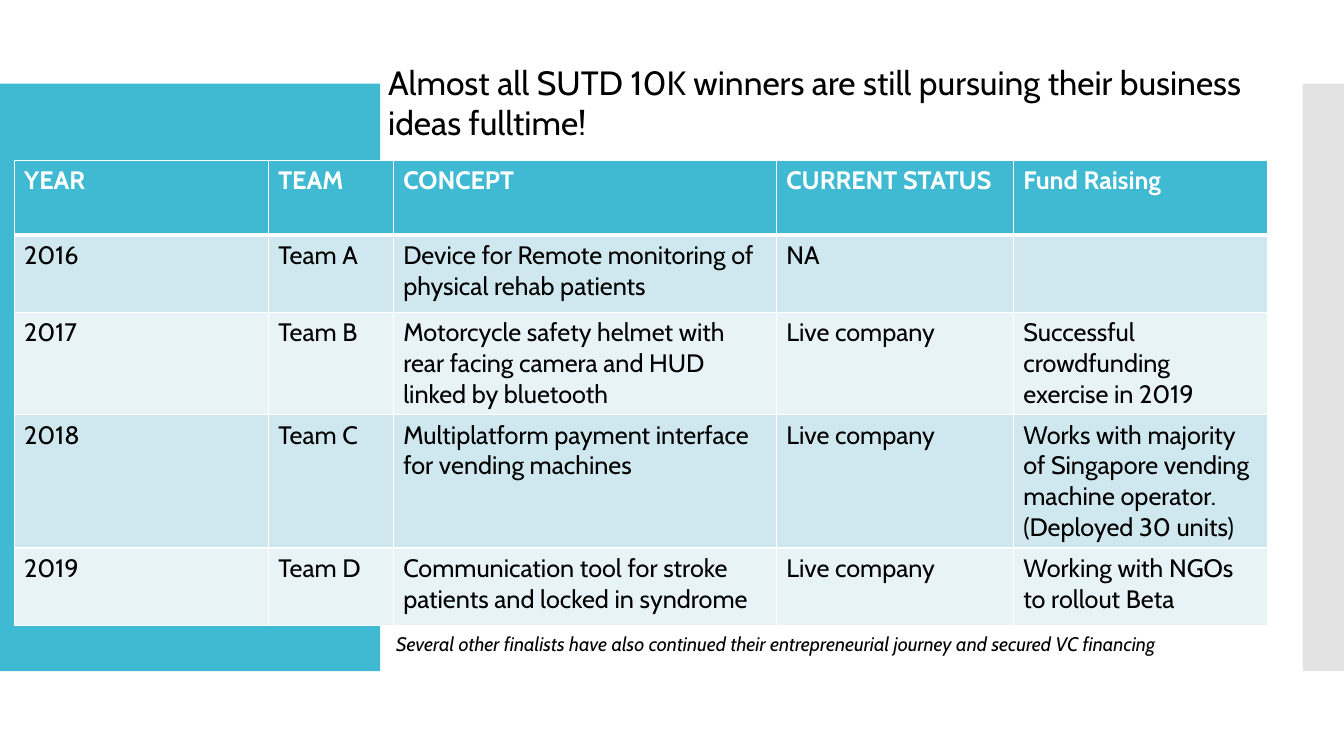
from lxml.etree import SubElement
from pptx import Presentation
from pptx.dml.color import RGBColor
from pptx.enum.shapes import MSO_SHAPE
from pptx.enum.text import MSO_ANCHOR, MSO_AUTO_SIZE, PP_ALIGN
from pptx.oxml.ns import qn
from pptx.util import Inches, Pt

# Content
TITLE = "Almost all SUTD 10K winners are still pursuing their business ideas fulltime!"
NOTE = ("Several other finalists have also continued their entrepreneurial "
        "journey and secured VC financing")
ROWS = [
    ("YEAR", "TEAM", "CONCEPT", "CURRENT STATUS", "Fund Raising"),
    ("2016", "Team A", "Device for Remote monitoring of physical rehab patients", "NA", ""),
    ("2017", "Team B", "Motorcycle safety helmet with rear facing camera and HUD linked by bluetooth",
     "Live company", "Successful crowdfunding exercise in 2019"),
    ("2018", "Team C", "Multiplatform payment interface for vending machines",
     "Live company", "Works with majority of Singapore vending machine operator. (Deployed 30 units)"),
    ("2019", "Team D", "Communication tool for stroke patients and locked in syndrome",
     "Live company", "Working with NGOs to rollout Beta"),
]
COLUMN_WIDTHS = [2.52, 1.24, 3.8, 2.35, 2.52]
ROW_HEIGHTS = [0.74, 0.77, 1.0, 1.3, 0.77]
COLORS = {"teal": "40BAD2", "gray": "E3E3E3", "band_dark": "CFE7EE",
          "band_light": "E8F3F7", "white": "FFFFFF", "black": "000000"}
FONT = "Cabin"
# Left, width of the side panels
PANELS = [(0, 3.77, "teal"), (12.92, 0.42, "gray")]


def color(name):
    return RGBColor.from_string(COLORS[name])


def set_font(paragraph, size, color_name, bold=False, italic=False):
    font = paragraph.font
    font.name, font.size, font.bold, font.italic = FONT, Pt(size), bold, italic
    font.color.rgb = color(color_name)


def fill_text(shape, text, size, italic=False):
    frame = shape.text_frame
    frame.text = text
    frame.word_wrap = True
    frame.auto_size = MSO_AUTO_SIZE.NONE
    frame.vertical_anchor = MSO_ANCHOR.TOP
    paragraph = frame.paragraphs[0]
    paragraph.alignment = PP_ALIGN.LEFT
    set_font(paragraph, size, "black", italic=italic)


def set_borders(cell, bottom, top):
    properties = cell._tc.get_or_add_tcPr()
    widths = {"a:lnL": 1, "a:lnR": 1, "a:lnT": top, "a:lnB": bottom}
    for position, (tag, width) in enumerate(widths.items()):
        line = SubElement(properties, qn(tag), w=str(Pt(width)))
        fill = SubElement(line, qn("a:solidFill"))
        SubElement(fill, qn("a:srgbClr"), val=COLORS["white"])
        properties.insert(position, line)


presentation = Presentation()
presentation.slide_width, presentation.slide_height = Inches(13.33), Inches(7.5)
slide = presentation.slides.add_slide(presentation.slide_layouts[5])

# Side panels
for left, width, fill_name in PANELS:
    panel = slide.shapes.add_shape(MSO_SHAPE.RECTANGLE, Inches(left), Inches(0.83),
                                   Inches(width), Inches(5.83))
    panel.shadow.inherit = False
    panel.fill.solid()
    panel.fill.fore_color.rgb = color(fill_name)
    panel.line.fill.background()

# Title
title = slide.shapes.title
title.left, title.top = Inches(3.75), Inches(0.56)
title.width, title.height = Inches(9.31), Inches(0.91)
fill_text(title, TITLE, 24)

# Winners table
table = slide.shapes.add_table(len(ROWS), len(COLUMN_WIDTHS), Inches(0.14), Inches(1.59),
                               Inches(sum(COLUMN_WIDTHS)), Inches(sum(ROW_HEIGHTS))).table
for column, width in zip(table.columns, COLUMN_WIDTHS):
    column.width = Inches(width)
for row_index, (height, texts) in enumerate(zip(ROW_HEIGHTS, ROWS)):
    table.rows[row_index].height = Inches(height)
    header = row_index == 0
    band = "teal" if header else ("band_light", "band_dark")[row_index % 2]
    for column_index, text in enumerate(texts):
        cell = table.cell(row_index, column_index)
        cell.text = text
        cell.fill.solid()
        cell.fill.fore_color.rgb = color(band)
        set_font(cell.text_frame.paragraphs[0], 18, "white" if header else "black", bold=header)
        set_borders(cell, bottom=3 if header else 1, top=3 if row_index == 1 else 1)

# Footnote
note = slide.shapes.add_textbox(Inches(3.83), Inches(6.22), Inches(8.5), Inches(0.34))
fill_text(note, NOTE, 14, italic=True)

presentation.save("out.pptx")
